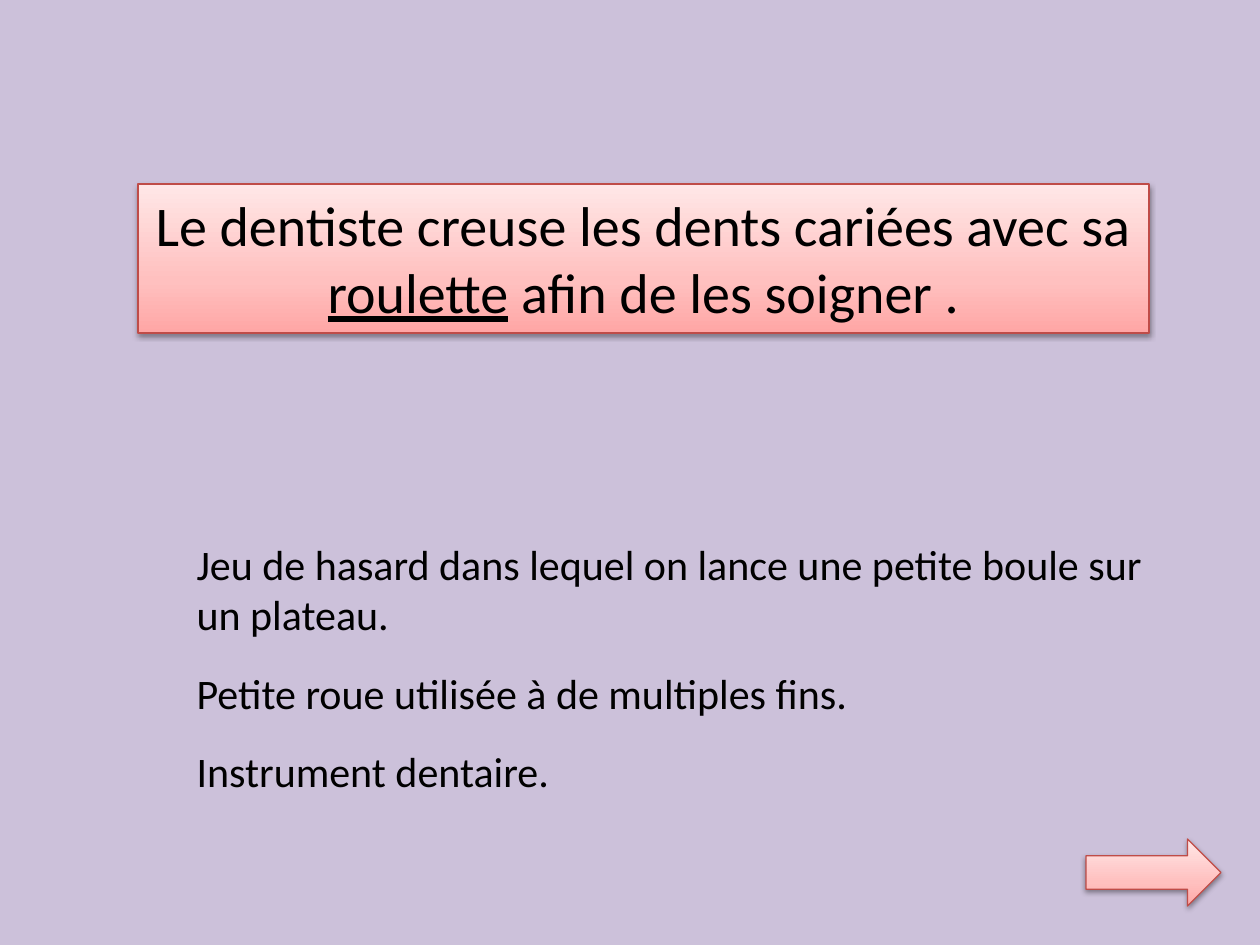
import copy
import pptx
import pptx.util
import pptx.dml.color
import pptx.enum.shapes
import pptx.enum.text
import pptx.oxml
import pptx.oxml.ns

RGB = pptx.dml.color.RGBColor
ALIGN = pptx.enum.text.PP_ALIGN
LILAC = RGB(0xCC, 0xC1, 0xDA)
BLACK = RGB(0x00, 0x00, 0x00)
RED = RGB(0xBF, 0x4C, 0x48)
ROSE = RGB(0xFF, 0xA6, 0xA5)
PINK = RGB(0xFF, 0xC0, 0xBF)
PALE = RGB(0xFF, 0xE7, 0xE7)
STOPS = [(0, ROSE), (0.35, PINK), (1, PALE)]
SHADOW = (
    f'<a:outerShdw {pptx.oxml.ns.nsdecls("a")} blurRad="40000" dist="20000" '
    'dir="5400000" rotWithShape="0"><a:srgbClr val="000000">'
    '<a:alpha val="38000"/></a:srgbClr></a:outerShdw>'
)
QUESTION = [[("Le dentiste creuse les dents cariées avec sa ", False),
             ("roulette", True), (" afin de les soigner .", False)]]
ANSWERS = [
    "Jeu de hasard dans lequel on lance une petite boule sur un plateau.",
    "Petite roue utilisée à de multiples fins.",
    "Instrument dentaire.",
]


def px(count):
    return pptx.util.Emu(round(count * 914400 / 126))


def place(shape, left, top, width, height):
    shape.left, shape.top = px(left), px(top)
    shape.width, shape.height = px(width), px(height)


def gloss(shape):
    fill = shape.fill
    fill.gradient()
    fill.gradient_angle = 90
    props = shape._element.spPr
    stops = props.find(".//" + pptx.oxml.ns.qn("a:gsLst"))
    stops.append(copy.deepcopy(stops[-1]))
    for stop, (spot, color) in zip(fill.gradient_stops, STOPS):
        stop.position = spot
        stop.color.rgb = color
    shape.line.color.rgb = RED
    shape.line.width = pptx.util.Pt(0.75)
    shape.shadow.inherit = False
    effects = props.find(pptx.oxml.ns.qn("a:effectLst"))
    effects.append(pptx.oxml.parse_xml(SHADOW))


def write(shape, paras, size=24, align=ALIGN.LEFT, after=0,
          anchor=pptx.enum.text.MSO_ANCHOR.TOP):
    frame = shape.text_frame
    frame.word_wrap = True
    frame.auto_size = pptx.enum.text.MSO_AUTO_SIZE.NONE
    frame.vertical_anchor = anchor
    for index, runs in enumerate(paras):
        para = frame.add_paragraph() if index else frame.paragraphs[0]
        para.alignment = align
        para.space_before = pptx.util.Pt(0)
        para.space_after = pptx.util.Pt(after)
        for words, under in runs:
            run = para.add_run()
            run.text = words
            font = run.font
            font.name, font.size = "Calibri", pptx.util.Pt(size)
            font.color.rgb = BLACK
            font.underline = under


def plain(shape):
    for para in shape.text_frame.paragraphs:
        props = para._p.get_or_add_pPr()
        props.set("marL", "0")
        props.set("indent", "0")
        props.append(props.makeelement(pptx.oxml.ns.qn("a:buNone")))


def main():
    deck = pptx.Presentation()
    deck.slide_width, deck.slide_height = px(1260), px(945)
    slide = deck.slides.add_slide(deck.slide_layouts[1])
    back = slide.background.fill
    back.solid()
    back.fore_color.rgb = LILAC

    title = slide.shapes.title
    place(title, 138, 184, 1011, 149)
    gloss(title)
    write(title, QUESTION, size=32, align=ALIGN.CENTER)

    body = slide.placeholders[1]
    place(body, 184, 532, 980, 272)
    write(body, [[(words, False)] for words in ANSWERS], after=16)
    plain(body)

    arrow = slide.shapes.add_shape(
        pptx.enum.shapes.MSO_SHAPE.RIGHT_ARROW,
        px(1086), px(839), px(135), px(67))
    gloss(arrow)
    deck.save("out.pptx")


if __name__ == "__main__":
    main()
